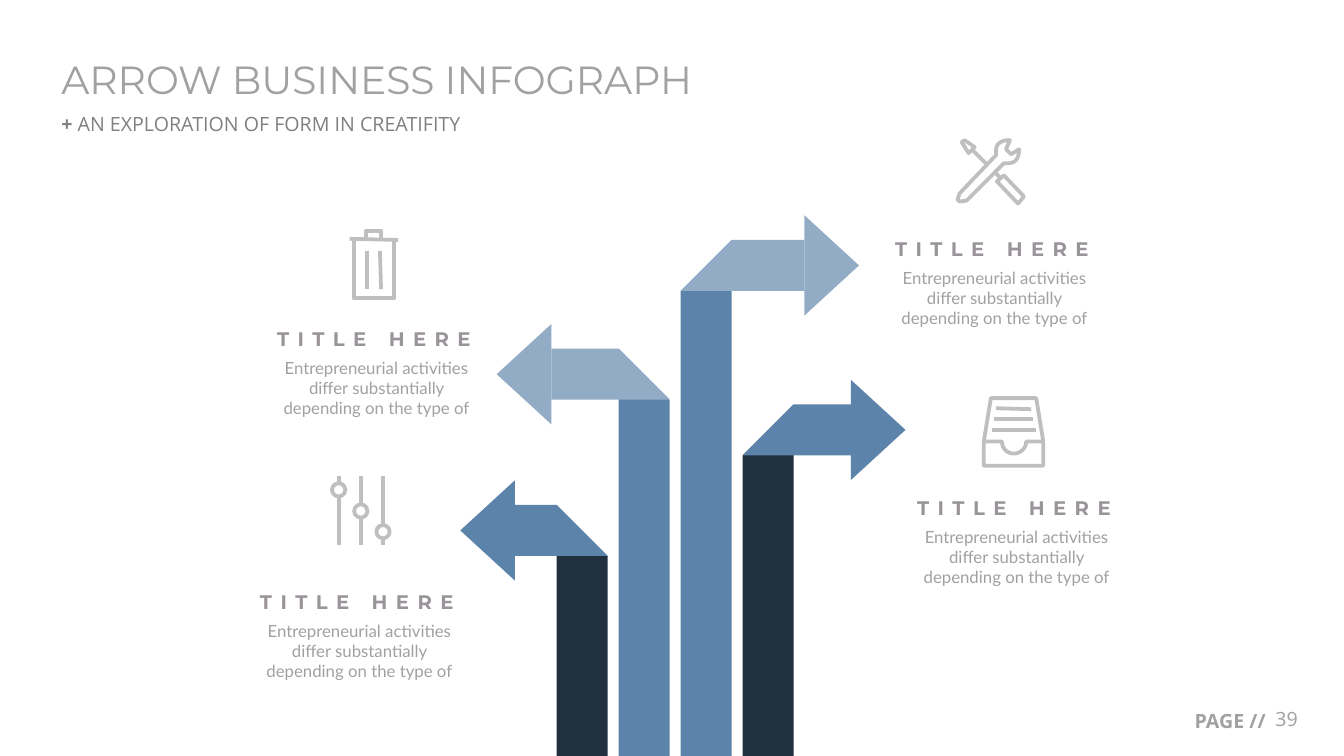
from lxml import etree
from pptx import Presentation
from pptx.dml.color import RGBColor
from pptx.enum.shapes import MSO_CONNECTOR, MSO_SHAPE
from pptx.enum.text import MSO_ANCHOR, MSO_AUTO_SIZE, PP_ALIGN
from pptx.oxml.ns import qn
from pptx.util import Pt

LEFT, MID = PP_ALIGN.LEFT, PP_ALIGN.CENTER
TOP, CORE = MSO_ANCHOR.TOP, MSO_ANCHOR.MIDDLE
GROW, FIXED = MSO_AUTO_SIZE.SHAPE_TO_FIT_TEXT, MSO_AUTO_SIZE.NONE
OVAL, LINE = MSO_SHAPE.OVAL, MSO_CONNECTOR.STRAIGHT

WIDE, HIGH = 960, 540
GREY, DARK, HEAD, ICON = "A1A1A1", "808080", "999499", "BFBFBF"
NAVY, BLUE, PALE = "21303F", "5C83AA", "92ACC6"

TITLE = "ARROW BUSINESS INFOGRAPH"
SUB = ["+", " AN EXPLORATION OF FORM IN CREATIFITY"]
PAGE, NUMBER = "PAGE // ", "39"
NAME = "TITLE HERE"
BODY = "Entrepreneurial activities differ substantially depending on the type of"
NOTES = [(190.8, 229.7), (178.6, 417.6), (632.2, 165.6), (648, 350.6)]

# column, top, head base, direction, stem colour, arm colour
ARROWS = [
    (2, 171.4, 574.6, 1, BLUE, PALE),
    (1, 249.1, 393.8, -1, BLUE, PALE),
    (3, 288.9, 607.8, 1, NAVY, BLUE),
    (0, 360.7, 367.8, -1, NAVY, BLUE),
]
FIRST, STEP, BAND, TIP, FLARE = 397.6, 44.3, 36.4, 39, 35.8

# a point has two numbers, a Bezier curve has six
PATHS = [
    [(702.7, 315.4), (707.8, 284.4), (740.2, 284.4), (745.2, 315.4)],
    [(715.7, 315.4), (715.7, 320.4, 719.3, 324, 724.3, 324),
     (728.6, 324, 733, 320.4, 733, 315.4), (745.2, 315.4),
     (745.2, 332.6), (702.7, 332.6), (702.7, 315.4), (715.7, 315.4)],
    [(261.4, 169.9), (261.4, 164.9), (272.2, 164.9), (272.2, 169.9)],
    [(252.7, 171.4), (252.7, 213.1), (281.5, 213.1), (281.5, 171.4)],
    [(712.1, 129.6), (717.1, 125.3), (731.5, 140.4), (727.2, 145.4),
     (712.1, 129.6)],
    [(691.9, 109.4), (696.2, 105.1), (689, 100.1), (686.9, 101.5),
     (691.9, 109.4)],
    [(727.9, 106.6), (722.2, 110.2), (718.6, 106.6), (721.4, 100.1),
     (713.5, 100.1, 711.4, 103.7, 711.4, 108), (711.4, 110.9),
     (685.4, 138.2), (684, 142.6), (685.4, 144), (690.5, 143.3),
     (717.1, 116.6), (720, 116.6),
     (724.3, 116.6, 727.9, 114.5, 727.9, 106.6)],
]
LINES = [
    (708.5, 307.4, 740.2, 307.4), (709.9, 299.5, 738, 299.5),
    (711.4, 291.6, 736.6, 292.3),
    (262.1, 179.3, 262.1, 206.6), (271.4, 179.3, 272.2, 206.6),
    (249.8, 170.6, 284.4, 171.4),
    (710.6, 123.1, 715, 127.4), (704.9, 117.4, 694.1, 106.6),
]
KNOBS = [(241.9, 349.9), (257.7, 365), (273.6, 379.8)]
RAIL, FOOT, RADIUS = 339.8, 389.5, 4.75


def paint(fmt, tone):
    """Give a fill or font colour from a hex string."""
    if hasattr(fmt, "solid"):
        fmt.solid()
        fmt = fmt.fore_color
    else:
        fmt = fmt.color
    fmt.rgb = RGBColor.from_string(tone)


def finish(shape, fill=None):
    """Fill a shape, or outline it as an icon part."""
    shape.shadow.inherit = False
    if fill:
        paint(shape.fill, fill)
        shape.line.fill.background()
    else:
        shape.fill.background()
        paint(shape.line, ICON)
        shape.line.width = Pt(2.7)


def trace(points):
    """Turn points and curves into plain points."""
    out = []
    for part in points:
        if len(part) == 2:
            out.append(part)
            continue
        a, b, c, d = out[-1], part[:2], part[2:4], part[4:]
        for k in range(1, 9):
            t = k / 8
            u = 1 - t
            out.append(tuple(
                u**3 * a[i] + 3 * u * u * t * b[i]
                + 3 * u * t * t * c[i] + t**3 * d[i] for i in (0, 1)))
    return out


def draw(slide, points, fill=None):
    """Draw a filled or outlined freeform."""
    dots = [(Pt(x), Pt(y)) for x, y in trace(points)]
    pen = slide.shapes.build_freeform(*dots[0], scale=1.0)
    shut = bool(fill) or dots[0] == dots[-1]
    pen.add_line_segments(dots[1:], close=shut)
    finish(pen.convert_to_shape(), fill)


def rule(slide, ends):
    """Draw one straight icon line."""
    line = slide.shapes.add_connector(LINE, *map(Pt, ends))
    paint(line.line, ICON)
    line.line.width = Pt(2.7)
    props = line._element.find(qn("p:spPr"))
    etree.SubElement(props, qn("a:effectLst"))


def write(slide, box, runs, size, face, align=LEFT, wrap=True, fit=GROW,
          anchor=TOP, lead=None, gap=None, space=None):
    """Write one paragraph of (text, colour, bold) runs."""
    frame = slide.shapes.add_textbox(*map(Pt, box)).text_frame
    frame.word_wrap, frame.auto_size = wrap, fit
    frame.vertical_anchor = anchor
    para = frame.paragraphs[0]
    para.alignment = align
    if lead:
        para.line_spacing = lead
    if gap:
        para.space_before = Pt(gap)
    for text, tone, bold in runs:
        run = para.add_run()
        run.text = text
        run.font.size, run.font.name, run.font.bold = Pt(size), face, bold
        paint(run.font, tone)
        if space:
            run._r.get_or_add_rPr().set("spc", str(space * 100))


def arrow(slide, col, top, base, way, stem, arm):
    """Draw a stem, its folded arm and the arrowhead."""
    left = FIRST + col * STEP
    near, far = (left, left + BAND)[::way]
    low, mid = top + BAND, top + BAND / 2
    draw(slide, [(far, top), (far, HIGH), (near, HIGH), (near, low)], stem)
    draw(slide, [(base, top), (far, top), (near, low), (base, low)], arm)
    draw(slide, [(base, mid - FLARE), (base + way * TIP, mid),
                 (base, mid + FLARE)], arm)


def main():
    """Build the slide and save it."""
    deck = Presentation()
    deck.slide_width, deck.slide_height = Pt(WIDE), Pt(HIGH)
    slide = deck.slides.add_slide(deck.slide_layouts[6])
    write(slide, (893.5, 501.1, 51.1, 24.5), [(NUMBER, GREY, False)],
          14, "Open Sans", MID)
    write(slide, (846, 502.6, 69.1, 24.5), [(PAGE, GREY, True)],
          14, "Open Sans", MID, wrap=False)
    write(slide, (36.7, 36, 894.2, 44.6), [(TITLE, GREY, False)],
          28, "Montserrat", fit=FIXED, anchor=CORE, lead=0.9)
    write(slide, (36.7, 78.5, 894.2, 34.6),
          [(SUB[0], DARK, True), (SUB[1], DARK, False)],
          14, "Open Sans", fit=FIXED, lead=0.9, gap=10)
    for item in ARROWS:
        arrow(slide, *item)
    for points in PATHS:
        draw(slide, points)
    for ends in LINES:
        rule(slide, ends)
    for x, y in KNOBS:
        rule(slide, (x, RAIL, x, y - RADIUS))
        rule(slide, (x, y + RADIUS, x, FOOT))
        box = (x - RADIUS, y - RADIUS, 2 * RADIUS, 2 * RADIUS)
        finish(slide.shapes.add_shape(OVAL, *map(Pt, box)))
    for x, y in NOTES:
        write(slide, (x - 1.4, y + 22, 159.1, 51.1), [(BODY, GREY, False)],
              12, "Lato", MID)
        write(slide, (x, y, 157.7, 24.5), [(NAME, HEAD, True)],
              14, "Montserrat", wrap=False, space=6)
    deck.save("out.pptx")


if __name__ == "__main__":
    main()
